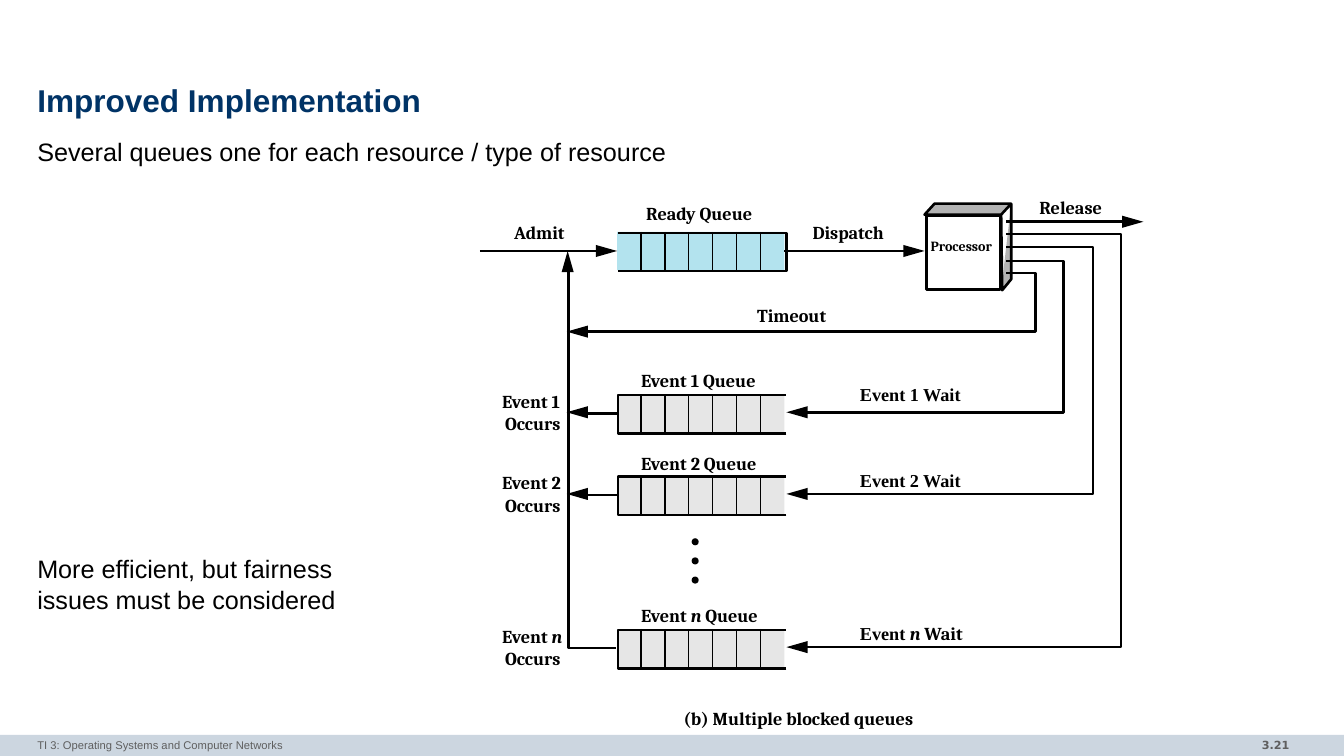
from lxml.etree import SubElement
from pptx import Presentation
from pptx.dml.color import RGBColor
from pptx.enum.shapes import MSO_CONNECTOR as Link, MSO_SHAPE as Preset
from pptx.enum.text import MSO_ANCHOR as Anchor, PP_ALIGN as Align
from pptx.oxml.ns import qn
from pptx.util import Inches, Pt

BLACK = RGBColor(0x00, 0x00, 0x00)
WHITE = RGBColor(0xFF, 0xFF, 0xFF)
NAVY = RGBColor(0x00, 0x33, 0x66)
FOOTER_GRAY = RGBColor(0x5F, 0x5F, 0x5F)
FOOTER_BAR = RGBColor(0xCC, 0xD6, 0xE0)
QUEUE_GRAY = RGBColor(0xE6, 0xE6, 0xE6)
READY_BLUE = RGBColor(0xB3, 0xE3, 0xEE)
PROCESSOR_SIDE = RGBColor(0xB3, 0xB3, 0xB3)

THICK, THIN = 1.88, 1
HEAD_LENGTH, HEAD_HALF = 0.21, 0.06
QUEUE_LEFT, QUEUE_WIDTH, QUEUE_HEIGHT = 6.12, 1.66, 0.38
QUEUE_RIGHT = 7.8
DIVIDERS = 6
SLOT_WIDTH = QUEUE_WIDTH / (DIVIDERS + 1)
RETURN_X = 5.64
PORT_X = 9.98


class Diagram:
    def __init__(self, page):
        self.shapes = page.shapes

    def paint(self, shape, fill=None, line=None):
        shape.shadow.inherit = False
        if fill is None:
            shape.fill.background()
        else:
            shape.fill.solid()
            shape.fill.fore_color.rgb = fill
        if line is None:
            shape.line.fill.background()
        else:
            shape.line.color.rgb = BLACK
            shape.line.width = Pt(line)
        return shape

    def preset(self, kind, left, top, width, height, fill, line=None):
        shape = self.shapes.add_shape(
            kind, Inches(left), Inches(top), Inches(width), Inches(height))
        return self.paint(shape, fill, line)

    def outline(self, points, fill=None, line=None, close=False):
        corners = [(Inches(x), Inches(y)) for x, y in points]
        builder = self.shapes.build_freeform(*corners[0], scale=1.0)
        builder.add_line_segments(corners[1:], close=close)
        return self.paint(builder.convert_to_shape(), fill, line)

    def line(self, start, end, width=THICK):
        link = self.shapes.add_connector(
            Link.STRAIGHT, *(Inches(value) for value in (*start, *end)))
        link.line.color.rgb = BLACK
        link.line.width = Pt(width)
        SubElement(link._element.spPr, qn("a:effectLst"))
        return link

    def head(self, x, y, across, down):
        """Arrowhead with its tip at x, y, pointing along (across, down)."""
        back_x, back_y = x - across * HEAD_LENGTH, y - down * HEAD_LENGTH
        side_x, side_y = down * HEAD_HALF, across * HEAD_HALF
        self.outline([(back_x - side_x, back_y - side_y), (x, y),
                      (back_x + side_x, back_y + side_y)], BLACK, close=True)

    def text(self, left, top, width, height, spans, size=13, font="Cambria",
             color=BLACK, bold=True, align=Align.LEFT, anchor=Anchor.TOP,
             spacing=None):
        """Spans are strings or (string, font, italic) tuples."""
        box = self.shapes.add_textbox(
            Inches(left), Inches(top), Inches(width), Inches(height))
        frame = box.text_frame
        frame.word_wrap = True
        frame.vertical_anchor = anchor
        frame.margin_left = frame.margin_right = 0
        frame.margin_top = frame.margin_bottom = 0
        para = frame.paragraphs[0]
        para.alignment = align
        if spacing:
            para.line_spacing = spacing
        for span in spans:
            words, name, italic = (
                (span, font, False) if isinstance(span, str) else span)
            run = para.add_run()
            run.text = words
            run.font.name = name
            run.font.size = Pt(size)
            run.font.bold = bold
            run.font.italic = italic
            run.font.color.rgb = color

    def label(self, left, top, *spans, width=1.4, **style):
        self.text(left, top, width, 0.26, spans, **style)

    def queue(self, top, fill, open_left=False):
        body = self.preset(Preset.RECTANGLE, QUEUE_LEFT, top, QUEUE_WIDTH,
                           QUEUE_HEIGHT, fill)
        near, far = QUEUE_LEFT + 0.01, QUEUE_RIGHT
        if not open_left:
            near, far = far, near
        upper, lower = top + 0.01, top + 0.01 + QUEUE_HEIGHT
        self.outline([(near, lower), (far, lower), (far, upper), (near, upper)],
                     line=THICK)
        for slot in range(1, DIVIDERS + 1):
            x = QUEUE_LEFT + slot * SLOT_WIDTH
            self.line((x, top), (x, top + QUEUE_HEIGHT), THIN)
        return body

    def route(self, port_y, turn_x, end_x, end_y):
        """Line from a processor port, down at turn_x, back to an arrow tip."""
        self.outline([(PORT_X, port_y), (turn_x, port_y), (turn_x, end_y),
                      (end_x + 0.19, end_y)], line=THICK)
        self.head(end_x, end_y, -1, 0)

    def arrow_right(self, start_x, tip_x, y):
        link = self.line((start_x, y), (tip_x - 0.16, y))
        self.head(tip_x, y, 1, 0)
        return link


def add_frame_text(diagram):
    diagram.preset(Preset.RECTANGLE, 0, 7.29, 13.33, 0.21, FOOTER_BAR)
    diagram.text(11.1, 7.28, 1.69, 0.23, ["3.21"], 8, "DejaVu Sans",
                 FOOTER_GRAY, align=Align.RIGHT, anchor=Anchor.MIDDLE)
    diagram.text(0.37, 7.28, 8.72, 0.22,
                 ["TI 3: Operating Systems and Computer Networks"], 8, "Arial",
                 FOOTER_GRAY, bold=False, anchor=Anchor.MIDDLE)
    diagram.text(0.37, 0.79, 12.6, 0.47, ["Improved Implementation"], 22.5,
                 "Arial", NAVY, anchor=Anchor.MIDDLE, spacing=0.85)
    for top, width, words in (
            (1.35, 12.6, "Several queues one for each resource / type of resource"),
            (5.48, 3.3, "More efficient, but fairness issues must be considered")):
        diagram.text(0.37, top, width, 0.65, [words], 18, "Arial",
                     bold=False, spacing=1.02)


def add_processor(diagram):
    diagram.outline([(9.93, 2.88), (9.93, 2.13), (9.17, 2.13), (9.27, 2.02),
                     (10.03, 2.02), (10.03, 2.77), (9.94, 2.88), (9.93, 2.13),
                     (10.03, 2.02)], PROCESSOR_SIDE, THICK)
    diagram.preset(Preset.RECTANGLE, 9.19, 2.14, 0.73, 0.73, WHITE, THICK)
    diagram.label(9.23, 2.36, "Processor", width=0.68, size=10)


def add_ready_path(diagram):
    ready = diagram.queue(2.3, READY_BLUE, open_left=True)
    diagram.arrow_right(4.76, QUEUE_LEFT, 2.49)
    dispatch = diagram.arrow_right(QUEUE_RIGHT, 9.17, 2.49)
    dispatch.begin_connect(ready, 3)
    diagram.arrow_right(PORT_X, 11.34, 2.2)
    diagram.route(2.71, 10.27, 5.62, 3.29)
    for left, top, words in ((5.1, 2.2, "Admit"), (6.41, 2.01, "Ready Queue"),
                             (8.06, 2.2, "Dispatch"), (10.31, 1.95, "Release"),
                             (7.51, 3.02, "Timeout")):
        diagram.label(left, top, words)


def add_event_queues(diagram):
    times, letter = "Times New Roman", ("n", "Cambria", True)
    rows = (  # queue top, number, name top, wait top, port, turn, wait label
        (3.91, "1", 3.66, 3.8, 2.59, 10.55, [("Event 1 Wait", times, False)]),
        (4.72, "2", 4.49, 4.66, 2.45, 10.84, [("Event 2 Wait", times, False)]),
        (6.24, letter, 6.0, 6.17, 2.32, 11.12,
         [("Event ", times, False), letter, " Wait"]))
    for top, number, name_top, wait_top, port_y, turn_x, wait in rows:
        middle = top + QUEUE_HEIGHT / 2
        body = diagram.queue(top, QUEUE_GRAY)
        diagram.route(port_y, turn_x, QUEUE_RIGHT, middle - 0.01)
        if number is letter:
            diagram.outline([(6.11, middle), (RETURN_X, middle),
                             (RETURN_X, 2.68)], line=THICK)
            diagram.head(RETURN_X - 0.01, 2.49, 0, -1)
        else:
            link = diagram.line((QUEUE_LEFT, middle), (5.81, middle))
            link.begin_connect(body, 1)
            diagram.head(5.62, middle - 0.01, -1, 0)
        diagram.label(6.36, name_top, "Event ", number, " Queue")
        diagram.label(4.98, top - 0.04, "Event ", number, width=0.75)
        diagram.label(5.01, top + 0.18, "Occurs", width=0.7)
        diagram.label(8.53, wait_top, *wait)
    for dot in range(3):
        diagram.preset(Preset.OVAL, 6.86, 5.34 + dot * 0.19, 0.07, 0.07, BLACK)
    diagram.label(6.78, 7.02, "(b) Multiple blocked queues", width=2.52)


def main():
    deck = Presentation()
    deck.slide_width, deck.slide_height = Inches(13.33), Inches(7.5)
    diagram = Diagram(deck.slides.add_slide(deck.slide_layouts[6]))
    add_frame_text(diagram)
    add_processor(diagram)
    add_ready_path(diagram)
    add_event_queues(diagram)
    deck.save("out.pptx")


if __name__ == "__main__":
    main()
